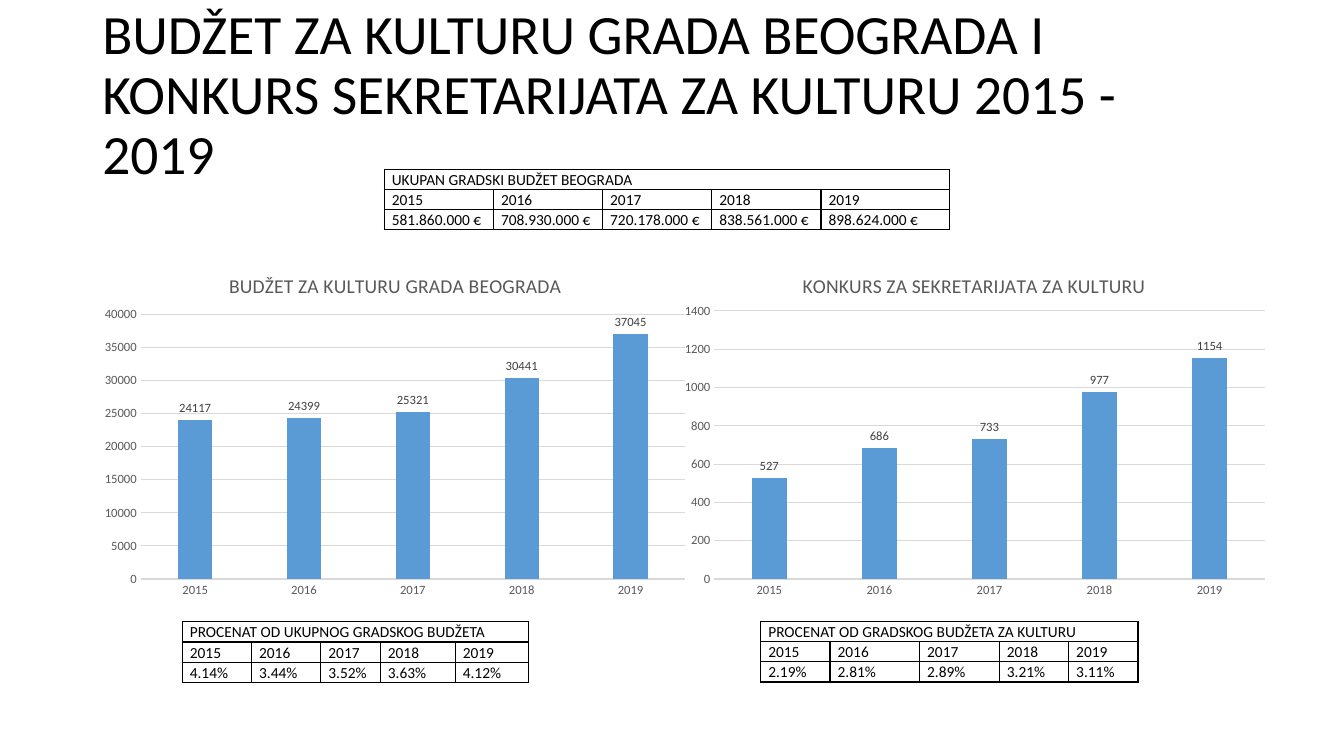
"""Build the slide on Belgrade's culture budget and the culture competition, 2015 - 2019."""
from dataclasses import dataclass
from typing import Any

from lxml import etree
from pptx import Presentation
from pptx.chart.data import CategoryChartData
from pptx.dml.color import RGBColor
from pptx.enum.chart import XL_CHART_TYPE, XL_LABEL_POSITION, XL_TICK_MARK
from pptx.enum.text import MSO_ANCHOR
from pptx.oxml.ns import qn
from pptx.util import Pt

COLUMNS = XL_CHART_TYPE.COLUMN_CLUSTERED
LABEL_ABOVE = XL_LABEL_POSITION.OUTSIDE_END
NO_TICK = XL_TICK_MARK.NONE
MIDDLE = MSO_ANCHOR.MIDDLE

FONT = "Calibri"
BLACK, GREY, DARK_GREY = "000000", "595959", "404040"
GRID, BLUE = "D9D9D9", "5B9BD5"
YEARS = ("2015", "2016", "2017", "2018", "2019")
ROW_HEIGHT = 14.4
TITLE = "BUDŽET ZA KULTURU GRADA BEOGRADA I KONKURS SEKRETARIJATA ZA KULTURU 2015 - 2019"


@dataclass(frozen=True)
class ColumnChart:
    left: float
    title: str
    values: tuple[int, ...]
    maximum: int
    step: int
    title_place: dict[str, float]
    plot_place: dict[str, float]


@dataclass(frozen=True)
class YearTable:
    left: float
    top: float
    title: str
    widths: tuple[float, ...]
    values: tuple[str, ...]


CHARTS = (
    ColumnChart(66, "BUDŽET ZA KULTURU GRADA BEOGRADA",
                (24117, 24399, 25321, 30441, 37045), 40000, 5000,
                {"x": 0.22, "y": 0.05}, {"x": 0.08, "y": 0.18, "w": 0.9, "h": 0.75}),
    ColumnChart(480, "KONKURS ZA SEKRETARIJATA ZA KULTURU",
                (527, 686, 733, 977, 1154), 1400, 200,
                {"x": 0.21, "y": 0.05}, {"x": 0.07, "y": 0.17, "w": 0.91, "h": 0.76}),
)
TABLES = (
    YearTable(130.2, 444.2, "PROCENAT OD UKUPNOG GRADSKOG BUDŽETA",
              (49.5, 49.5, 42.5, 53.5, 52.5),
              ("4.14%", "3.44%", "3.52%", "3.63%", "4.12%")),
    YearTable(543.4, 443.9, "PROCENAT OD GRADSKOG BUDŽETA ZA KULTURU",
              (49.5, 64, 57, 49.5, 49.5),
              ("2.19%", "2.81%", "2.89%", "3.21%", "3.11%")),
    YearTable(274.5, 121, "UKUPAN GRADSKI BUDŽET BEOGRADA",
              (78, 78, 78, 78, 92),
              ("581.860.000 €", "708.930.000 €", "720.178.000 €",
               "838.561.000 €", "898.624.000 €")),
)


def color(value: str) -> RGBColor:
    """Turn a hex string into a colour."""
    return RGBColor.from_string(value)


def apply(target: Any, values: dict[str, Any]) -> None:
    """Set each named attribute on the target."""
    for name, value in values.items():
        setattr(target, name, value)


def style_font(font: Any, size: float, hex_color: str) -> None:
    """Give a font the slide's typeface, a size and a colour."""
    apply(font, {"name": FONT, "size": Pt(size), "bold": False})
    font.color.rgb = color(hex_color)


def write(frame: Any, text: str, size: float, spacing: float) -> None:
    """Put one black line of text in a frame."""
    para = frame.paragraphs[0]
    para.line_spacing = spacing
    span = para.add_run()
    span.text = text
    style_font(span.font, size, BLACK)


def add_title(page: Any) -> None:
    """Add the slide heading."""
    box = page.shapes.add_textbox(Pt(66), Pt(28.8), Pt(828), Pt(80))
    apply(box.text_frame, {"word_wrap": True, "vertical_anchor": MIDDLE})
    write(box.text_frame, TITLE, 39.6, 0.9)


def place(parent: Any, index: int, position: dict[str, float]) -> None:
    """Fix a chart part at fractions of the chart area."""
    for old in parent.findall(qn("c:layout")):
        parent.remove(old)
    layout = etree.Element(qn("c:layout"))
    manual = etree.SubElement(layout, qn("c:manualLayout"))
    settings: dict[str, Any] = {"layoutTarget": "inner"} if "w" in position else {}
    settings |= {"xMode": "edge", "yMode": "edge"} | position
    for name, value in settings.items():
        etree.SubElement(manual, qn(f"c:{name}"), val=str(value))
    parent.insert(index, layout)


def style_axes(chart: Any, item: ColumnChart) -> None:
    """Format both axes and the gridlines."""
    for axis in (chart.category_axis, chart.value_axis):
        axis.major_tick_mark = axis.minor_tick_mark = NO_TICK
        style_font(axis.tick_labels.font, 9, GREY)
    scale = chart.value_axis
    apply(scale, {"minimum_scale": 0, "maximum_scale": item.maximum,
                  "major_unit": item.step, "has_major_gridlines": True})
    scale.format.line.fill.background()
    for line in (chart.category_axis.format.line, scale.major_gridlines.format.line):
        line.color.rgb = color(GRID)
        line.width = Pt(0.75)


def add_column_chart(page: Any, item: ColumnChart) -> None:
    """Add a column chart with a title and value labels."""
    data = CategoryChartData()
    data.categories = YEARS
    data.add_series("Series 1", item.values)
    chart = page.shapes.add_chart(COLUMNS, Pt(item.left), Pt(179.3),
                                  Pt(432), Pt(252), data).chart
    style_font(chart.font, 10, BLACK)
    apply(chart, {"has_legend": False, "has_title": True})
    span = chart.chart_title.text_frame.paragraphs[0].add_run()
    span.text = item.title
    style_font(span.font, 14, GREY)
    style_axes(chart, item)
    plot = chart.plots[0]
    apply(plot, {"gap_width": 219, "overlap": -27,
                 "vary_by_categories": False, "has_data_labels": True})
    apply(plot.data_labels, {"show_value": True, "position": LABEL_ABOVE})
    style_font(plot.data_labels.font, 9, DARK_GREY)
    fill = plot.series[0].format.fill
    fill.solid()
    fill.fore_color.rgb = color(BLUE)
    area = chart._chartSpace.find(f".//{qn('c:plotArea')}")
    place(area, 0, item.plot_place)
    place(chart.chart_title._element, 1, item.title_place)


def add_borders(cell: Any) -> None:
    """Draw a black line on each side of a cell."""
    properties = cell._tc.get_or_add_tcPr()
    for index, side in enumerate(("lnL", "lnR", "lnT", "lnB")):
        line = etree.Element(qn(f"a:{side}"), w=str(Pt(1)))
        fill = etree.SubElement(line, qn("a:solidFill"))
        etree.SubElement(fill, qn("a:srgbClr"), val=BLACK)
        properties.insert(index, line)


def add_year_table(page: Any, item: YearTable) -> None:
    """Add a table with a merged heading, the years and their values."""
    rows = ((item.title,), YEARS, item.values)
    table = page.shapes.add_table(len(rows), len(YEARS), Pt(item.left), Pt(item.top),
                                  Pt(sum(item.widths)), Pt(ROW_HEIGHT * len(rows))).table
    apply(table, {"first_row": False, "horz_banding": False})
    for column, width in zip(table.columns, item.widths):
        column.width = Pt(width)
    for row in table.rows:
        row.height = Pt(ROW_HEIGHT)
    for cell in table.iter_cells():
        apply(cell, {"margin_left": Pt(5.4), "margin_right": Pt(5.4),
                     "margin_top": 0, "margin_bottom": 0})
        cell.fill.background()
        add_borders(cell)
    table.cell(0, 0).merge(table.cell(0, len(YEARS) - 1))
    for row_index, texts in enumerate(rows):
        for column_index, text in enumerate(texts):
            write(table.cell(row_index, column_index).text_frame, text, 11, 1.07)


def main() -> None:
    """Build and save the deck."""
    deck = Presentation()
    apply(deck, {"slide_width": Pt(960), "slide_height": Pt(540)})
    page = deck.slides.add_slide(deck.slide_layouts[6])
    add_title(page)
    for chart in CHARTS:
        add_column_chart(page, chart)
    for table in TABLES:
        add_year_table(page, table)
    deck.save("out.pptx")


if __name__ == "__main__":
    main()
